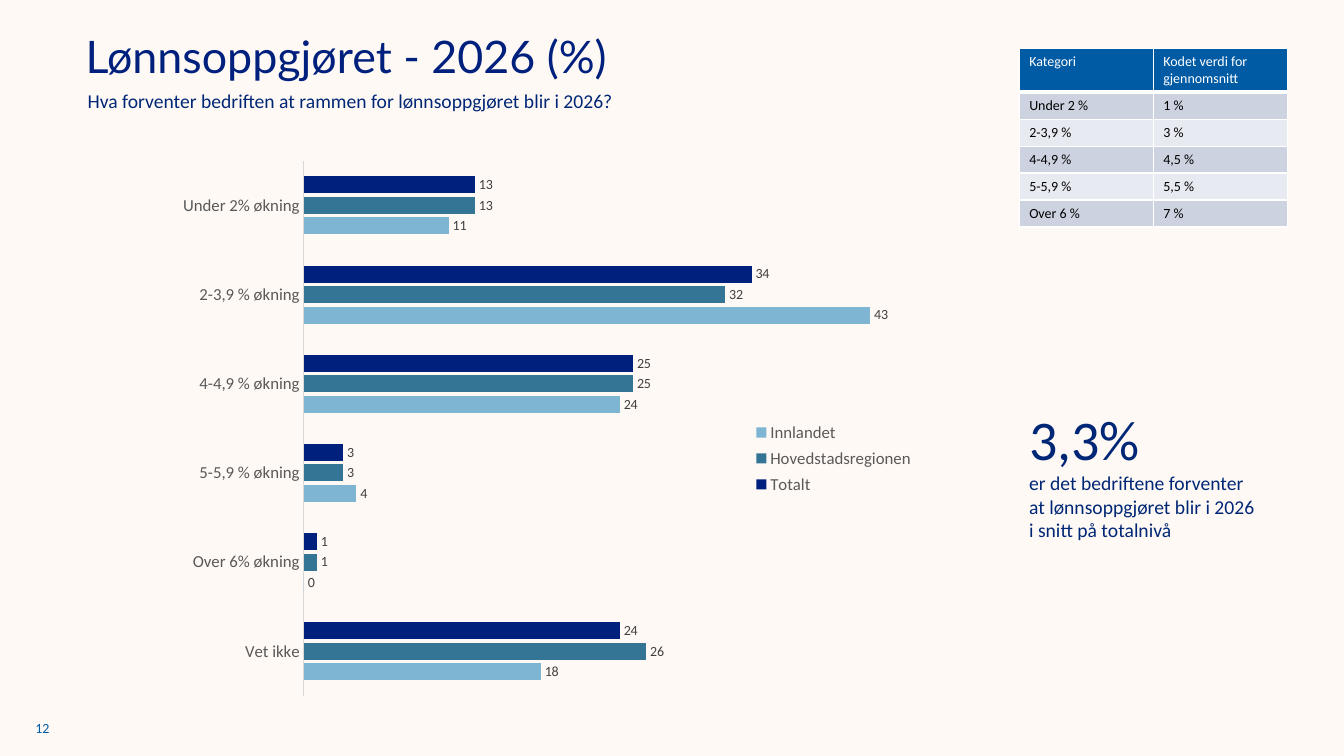
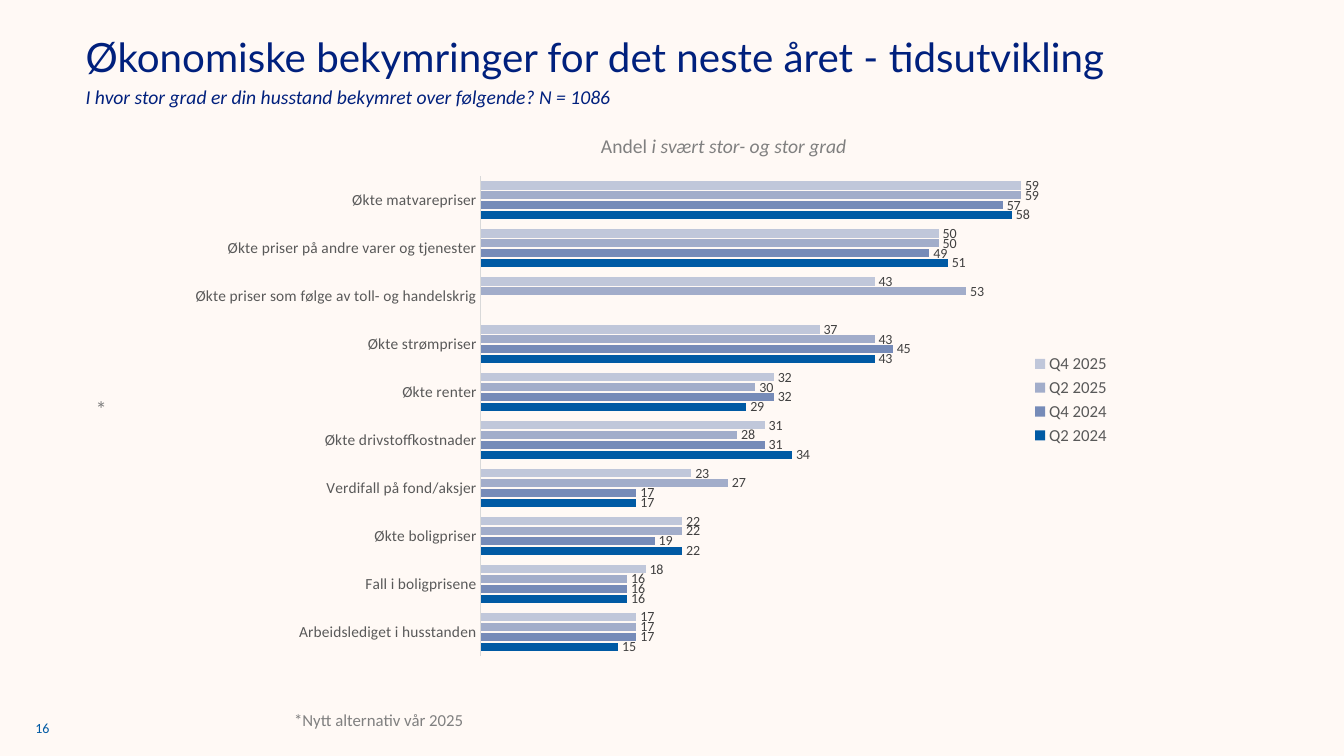
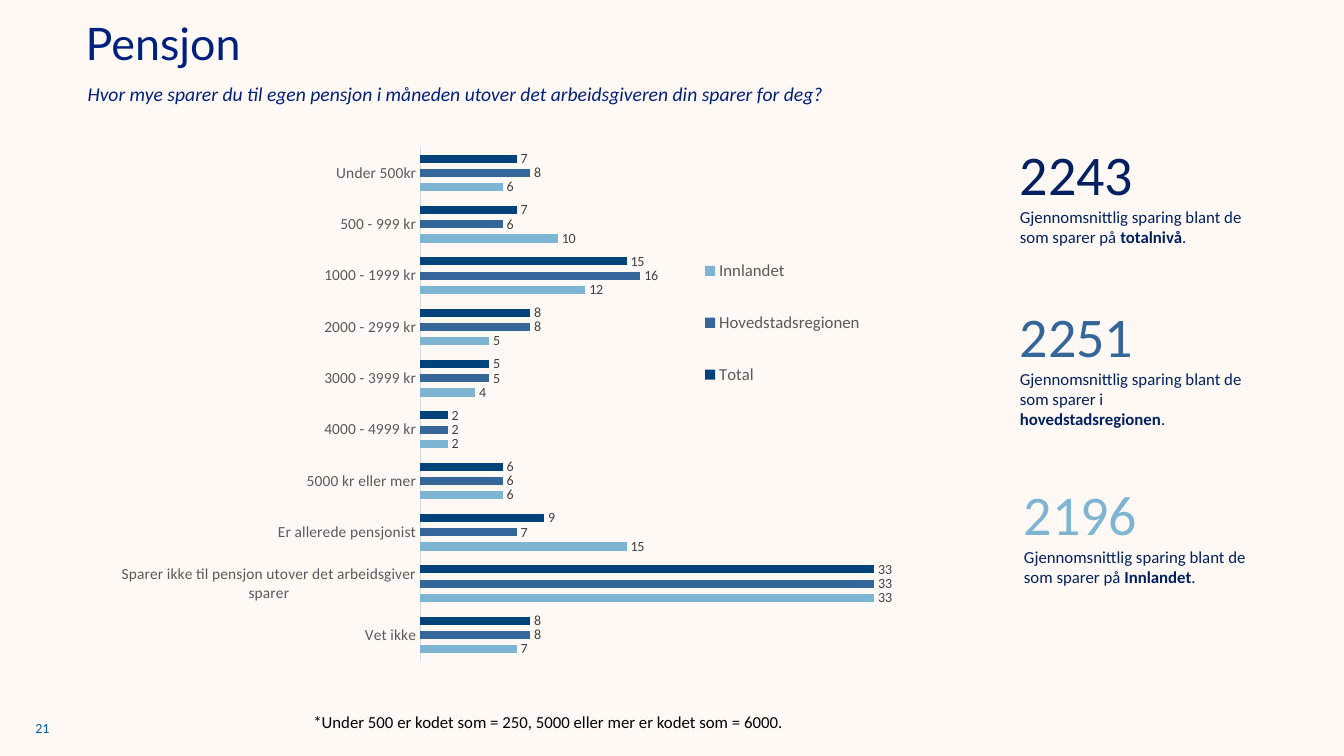
from lxml import etree
from pptx import Presentation
from pptx.chart.data import CategoryChartData
from pptx.dml.color import RGBColor
from pptx.enum import chart as ec, text as et
from pptx.oxml.ns import qn
from pptx.util import Pt

BODY, HEADING = "Calibri", "Lato"
CREAM, NAVY, DEEP, MIDNIGHT = "FFF9F5", "00207D", "002776", "002060"
BLUE, STEEL, SKY = "005AA4", "356699", "7EB5D2"
GREY, AXIS_GREY, LABEL_GREY, RULE = "808080", "595959", "404040", "D9D9D9"
WHITE, BLACK = "FFFFFF", "000000"
STRIPES = ("CCD2E0", "E7EAF0")

SLIDES = [
    {
        "number": "12",
        "title": ("Lønnsoppgjøret - 2026 (%)", 32, 26.6),
        "subtitle": ("Hva forventer bedriften at rammen for lønnsoppgjøret blir i 2026?",
                     DEEP, "", 62.6, 63.4),
        "chart": {
            "box": (51.8, 114.5, 846.7, 383), "plot": (217, 114.5, 423.4, 383),
            "legend": (535, 297.5, 121, 60),
            "gap": 182, "overlap": -20, "max": 45, "category_size": 12, "top_down": True,
            "categories": ["Under 2% økning", "2-3,9 % økning", "4-4,9 % økning",
                           "5-5,9 % økning", "Over 6% økning", "Vet ikke"],
            "series": [("Totalt", NAVY, (13, 34, 25, 3, 1, 24)),
                       ("Hovedstadsregionen", "347495", (13, 32, 25, 3, 1, 26)),
                       ("Innlandet", SKY, (11, 43, 24, 4, 0, 18))],
        },
        "texts": [
            ((728, 285.1, 180.7, 124), "left", [
                [("3,3%", 40, DEEP, "")],
                [("er det bedriftene forventer at lønnsoppgjøret blir i 2026 i snitt på totalnivå",
                  14, DEEP, "")]]),
        ],
        "table": [("Kategori", "Kodet verdi for gjennomsnitt"), ("Under 2 %", "1 %"),
                  ("2-3,9 %", "3 %"), ("4-4,9 %", "4,5 %"), ("5-5,9 %", "5,5 %"),
                  ("Over 6 %", "7 %")],
    },
    {
        "number": "16",
        "title": ("Økonomiske bekymringer for det neste året - tidsutvikling", 28.8, 26.6),
        "subtitle": ("I hvor stor grad er din husstand bekymret over følgende? N = 1086",
                     NAVY, "i", 61.2, 60.5),
        "chart": {
            "box": (95.8, 91.4, 705.6, 388), "plot": (343.4, 126, 458, 342.7),
            "legend": (734, 250, 62, 71),
            "gap": 120, "overlap": -20, "max": 70, "category_size": 11, "top_down": False,
            "categories": ["Arbeidslediget i husstanden", "Fall i boligprisene",
                           "Økte boligpriser", "Verdifall på fond/aksjer",
                           "Økte drivstoffkostnader", "Økte renter", "Økte strømpriser",
                           "Økte priser som følge av toll- og handelskrig",
                           "Økte priser på andre varer og tjenester", "Økte matvarepriser"],
            "series": [("Q2 2024", BLUE, (15, 16, 22, 17, 34, 29, 43, None, 51, 58)),
                       ("Q4 2024", "768BB8", (17, 16, 19, 17, 31, 32, 45, None, 49, 57)),
                       ("Q2 2025", "A2ADCA", (17, 16, 22, 27, 28, 30, 43, 53, 50, 59)),
                       ("Q4 2025", "C0C7DA", (17, 18, 22, 23, 31, 32, 37, 43, 50, 59))],
        },
        "texts": [
            ((351.4, 92.2, 331.2, 24.5), "center", [
                [("Andel ", 14, GREY, ""), ("i svært stor- og stor grad", 14, GREY, "i")]]),
            ((61.2, 278.6, 21, 26.6), "left", [[("*", 16, GREY, "")]]),
            ((203, 503.3, 277, 21.6), "left", [[("*Nytt alternativ vår 2025", 12, GREY, "")]]),
        ],
    },
    {
        "number": "21",
        "title": ("Pensjon", 32, 17.3),
        "subtitle": ("Hvor mye sparer du til egen pensjon i måneden utover det "
                     "arbeidsgiveren din sparer for deg?", NAVY, "i", 62.6, 58.3),
        "chart": {
            "box": (65.5, 94.3, 588.2, 388), "plot": (300.2, 105.2, 344, 366.7),
            "legend": (498, 163.5, 122, 134),
            "gap": 182, "overlap": -75, "max": 35, "category_size": 11, "top_down": True,
            "categories": ["Under 500kr", "500 - 999 kr", "1000 - 1999 kr", "2000 - 2999 kr",
                           "3000 - 3999 kr", "4000 - 4999 kr", "5000 kr eller mer",
                           "Er allerede pensjonist",
                           "Sparer ikke til pensjon utover det arbeidsgiver sparer",
                           "Vet ikke"],
            "series": [("Total", "00437B", (7, 7, 15, 8, 5, 2, 6, 9, 33, 8)),
                       ("Hovedstadsregionen", STEEL, (8, 6, 16, 8, 5, 2, 6, 7, 33, 8)),
                       ("Innlandet", SKY, (6, 10, 12, 5, 4, 2, 6, 15, 33, 7))],
        },
        "texts": [
            ((left, top, 174.2, 110), "left", [
                [(amount, 40, color, "")],
                [("Gjennomsnittlig sparing blant de som sparer " + preposition + " ",
                  12, MIDNIGHT, ""),
                 (group, 12, MIDNIGHT, "b"), (".", 12, MIDNIGHT, "")]])
            for left, top, amount, color, preposition, group in [
                (721.4, 95.8, "2243", MIDNIGHT, "på", "totalnivå"),
                (721.4, 211.7, "2251", STEEL, "i", "hovedstadsregionen"),
                (724.3, 339.1, "2196", SKY, "på", "Innlandet")]
        ] + [
            ((216.7, 504.7, 415.4, 21.6), "left", [
                [("*Under 500 er kodet som = 250, 5000 eller mer er kodet som = 6000.",
                  12, BLACK, "")]]),
        ],
    },
]


def rgb(color):
    return RGBColor.from_string(color)


def points(box):
    return [Pt(length) for length in box]


def style_font(font, size, color, style="", name=BODY):
    font.name, font.size, font.color.rgb = name, Pt(size), rgb(color)
    font.bold, font.italic = "b" in style, "i" in style


def clear_margins(frame):
    frame.margin_left = frame.margin_top = frame.margin_right = frame.margin_bottom = 0


def add_run(paragraph, words, size, color, style="", name=BODY):
    run = paragraph.add_run()
    run.text = words
    style_font(run.font, size, color, style, name)


def add_text(slide, box, align, paragraphs, flush=False):
    frame = slide.shapes.add_textbox(*points(box)).text_frame
    frame.word_wrap = True
    if flush:
        clear_margins(frame)
    for index, runs in enumerate(paragraphs):
        paragraph = frame.add_paragraph() if index else frame.paragraphs[0]
        paragraph.alignment = et.PP_ALIGN[align.upper()]
        for run in runs:
            add_run(paragraph, *run)
    return frame


def add_heading(slide, title, subtitle, number):
    words, size, top = title
    holder = slide.shapes.title
    holder.left, holder.top, holder.width, holder.height = points((61.2, top, 836.6, 31.7))
    frame = holder.text_frame
    clear_margins(frame)
    frame.auto_size = et.MSO_AUTO_SIZE.NONE
    frame.vertical_anchor = et.MSO_ANCHOR.MIDDLE
    paragraph = frame.paragraphs[0]
    paragraph.alignment, paragraph.line_spacing = et.PP_ALIGN.LEFT, 0.9
    add_run(paragraph, words, size, NAVY, name=HEADING)

    question, color, style, left, top = subtitle
    add_text(slide, (left, top, 750, 22.3), "left", [[(question, 14, color, style)]], True)
    footer = add_text(slide, (25.2, 514.1, 37.4, 12.2), "left", [[(number, 10, BLUE)]], True)
    footer.vertical_anchor = et.MSO_ANCHOR.MIDDLE


def set_layout(parent, index, box, chart_box, inner=False):
    for old in parent.findall(qn("c:layout")):
        parent.remove(old)
    layout = etree.Element(qn("c:layout"))
    parent.insert(index, layout)
    manual = etree.SubElement(layout, qn("c:manualLayout"))
    left, top, width, height = chart_box
    settings = [("layoutTarget", "inner")] if inner else []
    settings += [("xMode", "edge"), ("yMode", "edge"),
                 ("x", (box[0] - left) / width), ("y", (box[1] - top) / height),
                 ("w", box[2] / width), ("h", box[3] / height)]
    for tag, value in settings:
        etree.SubElement(manual, qn("c:" + tag)).set("val", str(value))


def add_bars(slide, bars):
    data = CategoryChartData(number_format="0")
    data.categories = bars["categories"]
    for name, _, values in bars["series"]:
        data.add_series(name, values)
    chart = slide.shapes.add_chart(
        ec.XL_CHART_TYPE.BAR_CLUSTERED, *points(bars["box"]), data).chart
    chart.has_title = False
    style_font(chart.font, 10, BLACK)

    plot = chart.plots[0]
    plot.gap_width, plot.overlap, plot.vary_by_categories = bars["gap"], bars["overlap"], False
    for series, (_, color, _) in zip(plot.series, bars["series"]):
        series.format.fill.solid()
        series.format.fill.fore_color.rgb = rgb(color)
        series.invert_if_negative = False
    plot.has_data_labels = True
    labels = plot.data_labels
    labels.show_value, labels.position = True, ec.XL_LABEL_POSITION.OUTSIDE_END
    labels.number_format, labels.number_format_is_linked = "0", False
    style_font(labels.font, 10, LABEL_GREY)

    categories, scale = chart.category_axis, chart.value_axis
    categories.reverse_order = bars["top_down"]
    categories.major_tick_mark = categories.minor_tick_mark = ec.XL_TICK_MARK.NONE
    categories.format.line.color.rgb, categories.format.line.width = rgb(RULE), Pt(0.75)
    style_font(categories.tick_labels.font, bars["category_size"], AXIS_GREY)
    scale.visible = scale.has_major_gridlines = False
    scale.minimum_scale, scale.maximum_scale = 0, bars["max"]

    chart.has_legend = True
    legend = chart.legend
    legend.position, legend.include_in_layout = ec.XL_LEGEND_POSITION.RIGHT, False
    style_font(legend.font, 12, AXIS_GREY)
    set_layout(legend._element, 1, bars["legend"], bars["box"])
    set_layout(chart._chartSpace.chart.plotArea, 0, bars["plot"], bars["box"], True)


def set_borders(cell, bottom):
    properties = cell._tc.get_or_add_tcPr()
    for index, (side, width) in enumerate([("L", 1), ("R", 1), ("T", 1), ("B", bottom)]):
        line = etree.Element(qn("a:ln" + side), w=str(Pt(width)))
        fill = etree.SubElement(line, qn("a:solidFill"))
        etree.SubElement(fill, qn("a:srgbClr"), val=WHITE)
        properties.insert(index, line)


def add_code_table(slide, rows):
    heights = [31.2] + [19.2] * (len(rows) - 1)
    table = slide.shapes.add_table(
        len(rows), 2, *points((728, 34.6, 191.6, sum(heights)))).table
    for index, (row, height) in enumerate(zip(rows, heights)):
        table.rows[index].height = Pt(height)
        for column, words in enumerate(row):
            cell = table.cell(index, column)
            cell.fill.solid()
            cell.fill.fore_color.rgb = rgb(STRIPES[(index - 1) % 2] if index else BLUE)
            set_borders(cell, 1 if index else 3)
            add_run(cell.text_frame.paragraphs[0], words, 10, BLACK if index else WHITE)


def main():
    deck = Presentation()
    deck.slide_width, deck.slide_height = Pt(960), Pt(540)
    background = deck.slide_master.background.fill
    background.solid()
    background.fore_color.rgb = rgb(CREAM)
    for content in SLIDES:
        slide = deck.slides.add_slide(deck.slide_layouts[5])
        add_heading(slide, content["title"], content["subtitle"], content["number"])
        add_bars(slide, content["chart"])
        for box, align, paragraphs in content["texts"]:
            add_text(slide, box, align, paragraphs)
        if "table" in content:
            add_code_table(slide, content["table"])
    deck.save("out.pptx")


if __name__ == "__main__":
    main()
